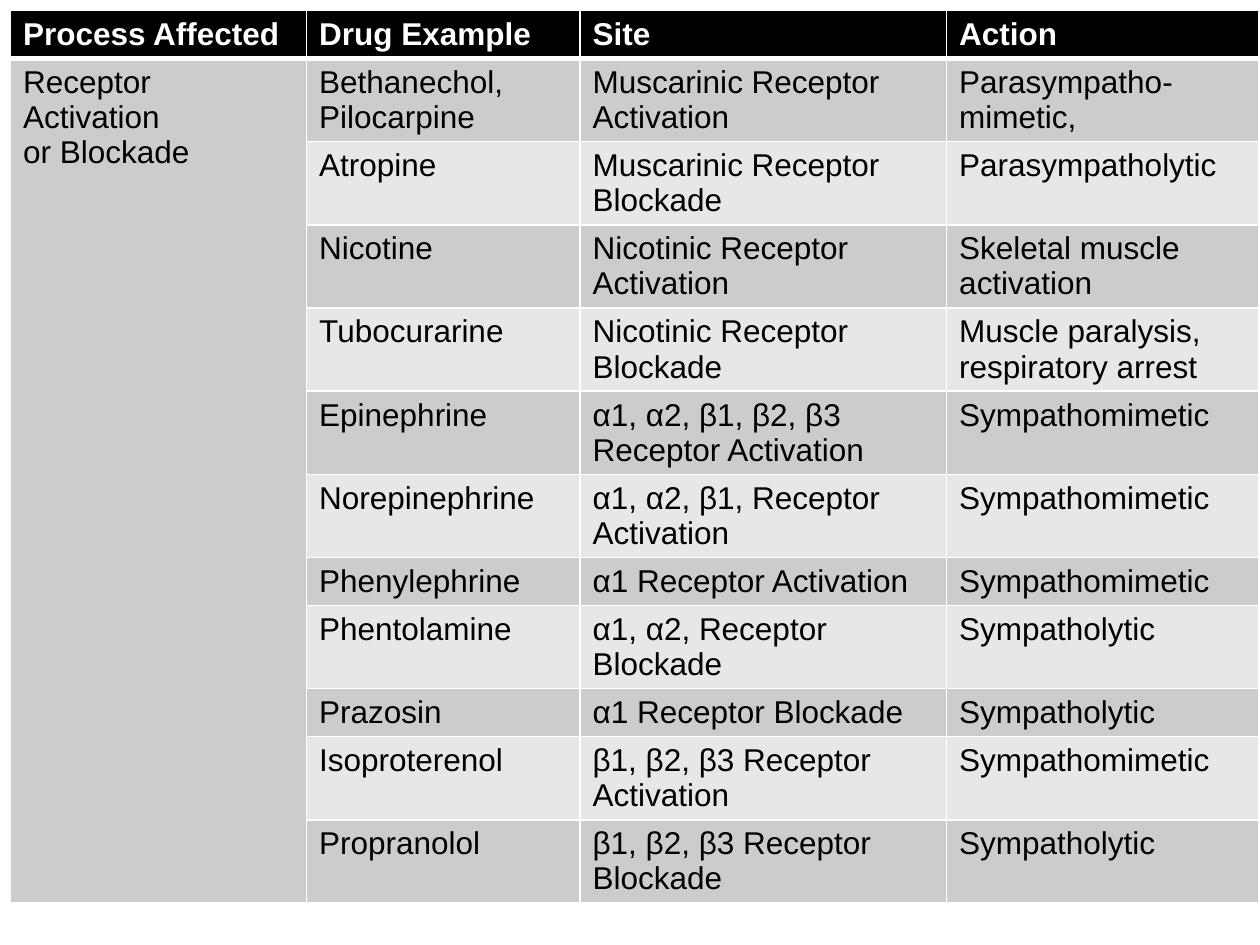
import dataclasses

import pptx
import pptx.dml.color
import pptx.oxml
import pptx.oxml.ns
import pptx.util

Pt = pptx.util.Pt


@dataclasses.dataclass(frozen=True)
class Theme:
    font: str = "Arial"
    size: float = 18
    white: str = "FFFFFF"
    black: str = "000000"
    dark_band: str = "CCCCCC"
    light_band: str = "E7E7E7"
    rule: float = 1
    header_rule: float = 3


THEME = Theme()
COLUMN_WIDTHS = (169.2, 156.24, 209.52, 178.56)
HEADER_HEIGHT, ROW_HEIGHT = 26, 26.64
HEADINGS = ("Process Affected", "Drug Example", "Site", "Action")
PROCESS = ("Receptor Activation", "or Blockade")
DRUGS = (
    ("Bethanechol, Pilocarpine", "Muscarinic Receptor Activation", "Parasympatho-mimetic,"),
    ("Atropine", "Muscarinic Receptor Blockade", "Parasympatholytic"),
    ("Nicotine", "Nicotinic Receptor Activation", "Skeletal muscle activation"),
    ("Tubocurarine", "Nicotinic Receptor Blockade", "Muscle paralysis, respiratory arrest"),
    ("Epinephrine", "α1, α2, β1, β2, β3 Receptor Activation", "Sympathomimetic"),
    ("Norepinephrine", "α1, α2, β1, Receptor Activation", "Sympathomimetic"),
    ("Phenylephrine", "α1 Receptor Activation", "Sympathomimetic"),
    ("Phentolamine", "α1, α2, Receptor Blockade", "Sympatholytic"),
    ("Prazosin", "α1 Receptor Blockade", "Sympatholytic"),
    ("Isoproterenol", "β1, β2, β3 Receptor Activation", "Sympathomimetic"),
    ("Propranolol", "β1, β2, β3 Receptor Blockade", "Sympatholytic"),
)


def rgb(value):
    return pptx.dml.color.RGBColor.from_string(value)


def write_text(cell, lines, color, bold):
    frame = cell.text_frame
    for index, line in enumerate(lines):
        para = frame.paragraphs[0] if index == 0 else frame.add_paragraph()
        span = para.add_run()
        span.text = line
        span.font.color.rgb = rgb(color)
        formats = {"name": THEME.font, "size": Pt(THEME.size), "bold": bold}
        for name, value in formats.items():
            setattr(span.font, name, value)


def draw_borders(cell, widths):
    properties = cell._tc.get_or_add_tcPr()
    for index, (side, width) in enumerate(widths.items()):
        border = pptx.oxml.parse_xml(
            f'<a:{side} {pptx.oxml.ns.nsdecls("a")} w="{Pt(width)}">'
            f'<a:solidFill><a:srgbClr val="{THEME.white}"/></a:solidFill></a:{side}>'
        )
        properties.insert(index, border)


def format_cell(cell, fill, top=THEME.rule, bottom=THEME.rule):
    cell.fill.solid()
    cell.fill.fore_color.rgb = rgb(fill)
    draw_borders(cell, {"lnL": THEME.rule, "lnR": THEME.rule, "lnT": top, "lnB": bottom})


def add_header(table):
    table.rows[0].height = Pt(HEADER_HEIGHT)
    for cell, heading in zip(table.rows[0].cells, HEADINGS):
        format_cell(cell, THEME.black, bottom=THEME.header_rule)
        write_text(cell, [heading], THEME.white, True)


def add_drug_row(table, number, drug):
    row = table.rows[number]
    row.height = Pt(ROW_HEIGHT)
    fill = THEME.dark_band if number % 2 else THEME.light_band
    top = THEME.header_rule if number == 1 else THEME.rule
    process, *details = row.cells
    format_cell(process, THEME.dark_band, top=top)
    for cell, text in zip(details, drug):
        format_cell(cell, fill, top=top)
        write_text(cell, [text], THEME.black, False)


def add_drug_table(page):
    box = page.shapes.add_table(
        len(DRUGS) + 1, len(HEADINGS), Pt(6), Pt(6), Pt(714), Pt(540)
    )
    table = box.table
    for column, width in zip(table.columns, COLUMN_WIDTHS):
        column.width = Pt(width)
    add_header(table)
    for number, drug in enumerate(DRUGS, 1):
        add_drug_row(table, number, drug)
    process = table.cell(1, 0)
    process.merge(table.cell(len(DRUGS), 0))
    write_text(process, PROCESS, THEME.black, False)
    box.width, box.height = Pt(714), Pt(540)


def main():
    deck = pptx.Presentation()
    deck.slide_width, deck.slide_height = Pt(720), Pt(540)
    page = deck.slides.add_slide(deck.slide_layouts.get_by_name("Blank"))
    add_drug_table(page)
    deck.save("out.pptx")


if __name__ == "__main__":
    main()
